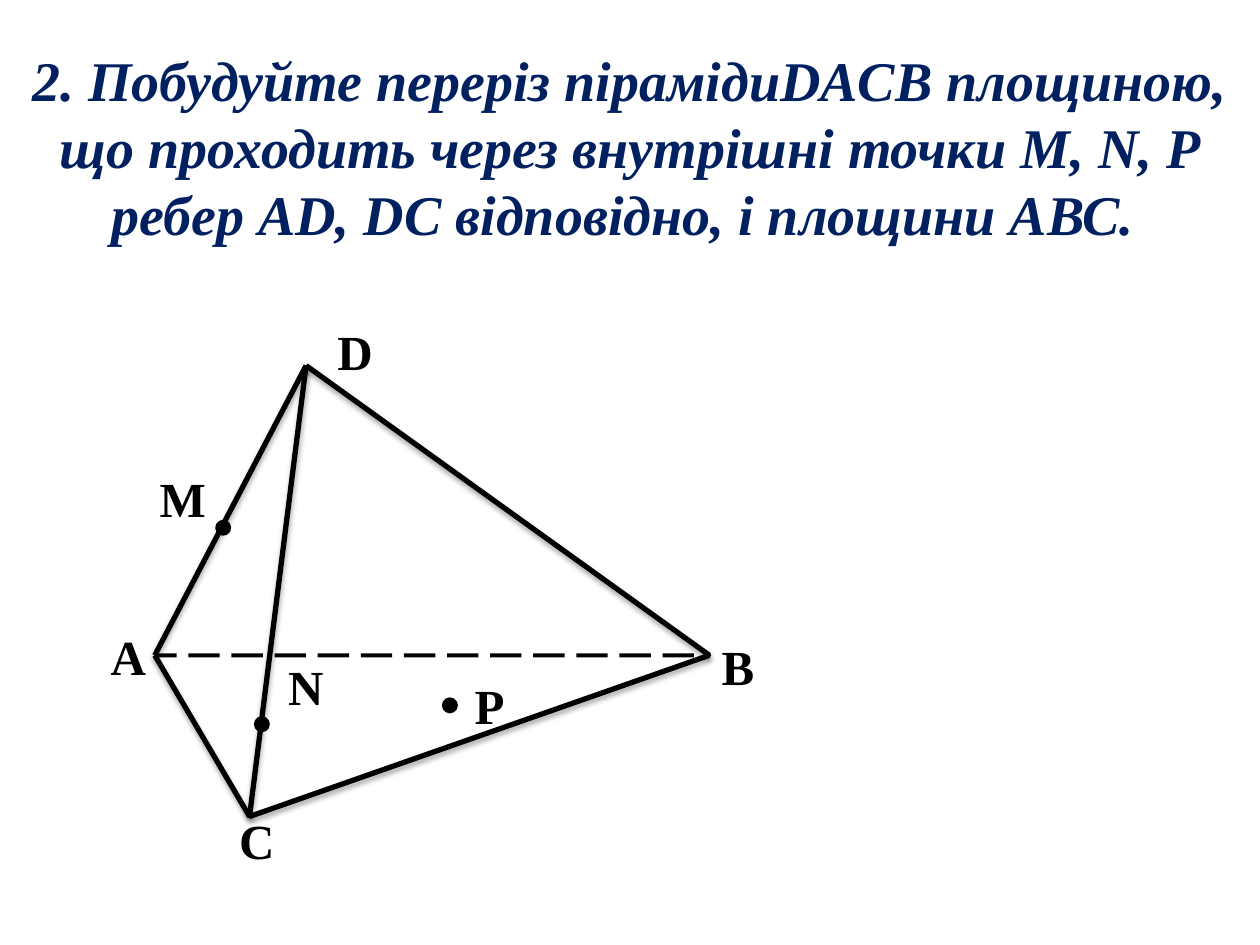
from dataclasses import dataclass
from lxml.etree import SubElement
from pptx import Presentation
from pptx.dml.color import RGBColor
from pptx.enum.dml import MSO_LINE
from pptx.enum.shapes import MSO_CONNECTOR, MSO_SHAPE
from pptx.enum.text import MSO_ANCHOR, MSO_AUTO_SIZE, PP_ALIGN
from pptx.oxml.ns import qn
from pptx.util import Cm, Pt


@dataclass(frozen=True)
class Theme:
    """Colours, type sizes and line widths."""
    navy: RGBColor = RGBColor(0x00, 0x20, 0x60)
    black: RGBColor = RGBColor(0, 0, 0)
    font: str = "Times New Roman"
    head: int = 32
    mark: int = 28
    edge: float = 3
    dash: float = 2.25
    rim: float = 2


class Board:
    """Draws styled elements on the current slide."""

    def __init__(self, slide, theme):
        self.slide, self.theme = slide, theme
        self.group = slide.shapes.add_group_shape().shapes

    def add_text(self, para, text, size, color, slant=None):
        """Add one styled run."""
        run = para.add_run()
        run.text = text
        font = run.font
        font.name, font.size, font.bold, font.italic = self.theme.font, Pt(size), True, slant
        font.color.rgb = color

    def title(self, text, left, top, width, height):
        """Fill and place the title."""
        shape = self.slide.shapes.title
        shape.left, shape.top, shape.width, shape.height = map(Cm, (left, top, width, height))
        frame = shape.text_frame
        frame.word_wrap, frame.vertical_anchor = True, MSO_ANCHOR.TOP
        frame.auto_size = MSO_AUTO_SIZE.SHAPE_TO_FIT_TEXT
        para = frame.paragraphs[0]
        para.alignment = PP_ALIGN.CENTER
        self.add_text(para, text, self.theme.head, self.theme.navy, True)

    def base(self, left, top, width, height, peak):
        """Draw the dashed base with its peak pointing down."""
        shape = self.group.add_shape(MSO_SHAPE.ISOSCELES_TRIANGLE, *map(Cm, (left, top, width, height)))
        shape.adjustments[0] = peak
        shape.rotation = 180
        shape._element.spPr.find(qn("a:xfrm")).set("flipH", "1")
        shape.shadow.inherit = False
        shape.fill.background()
        shape.line.color.rgb = self.theme.black
        shape.line.width = Pt(self.theme.dash)
        shape.line.dash_style = MSO_LINE.LONG_DASH

    def edge(self, start, end):
        """Draw a solid edge with a soft shadow."""
        line = self.group.add_connector(MSO_CONNECTOR.STRAIGHT, *map(Cm, start + end))
        line.line.color.rgb = self.theme.black
        line.line.width = Pt(self.theme.edge)
        effect = SubElement(line._element.spPr, qn("a:effectLst"))
        shade = SubElement(effect, qn("a:outerShdw"), blurRad="40000", dist="23000",
                           dir="5400000", rotWithShape="0")
        color = SubElement(shade, qn("a:srgbClr"), val=str(self.theme.black))
        SubElement(color, qn("a:alpha"), val="35000")

    def dot(self, x, y, size=0.25):
        """Draw a point centred at x, y."""
        shape = self.group.add_shape(MSO_SHAPE.OVAL, Cm(x - size / 2), Cm(y - size / 2), Cm(size), Cm(size))
        shape.shadow.inherit = False
        shape.fill.solid()
        shape.fill.fore_color.rgb = shape.line.color.rgb = self.theme.black
        shape.line.width = Pt(self.theme.rim)

    def label(self, text, left, top, width, height=1.45):
        """Name a point."""
        frame = self.group.add_textbox(*map(Cm, (left, top, width, height))).text_frame
        frame.word_wrap = False
        frame.auto_size = MSO_AUTO_SIZE.SHAPE_TO_FIT_TEXT
        self.add_text(frame.paragraphs[0], text, self.theme.mark, self.theme.black)


def main():
    """Build the pyramid slide."""
    deck = Presentation()
    deck.slide_width, deck.slide_height = Cm(25.4), Cm(19.05)
    board = Board(deck.slides.add_slide(deck.slide_layouts[5]), Theme())
    board.title("2. Побудуйте переріз пірамідиDACB площиною, що проходить через внутрішні "
                "точки M, N, P ребер AD, DC відповідно, і площини АВС. ", 0, 0.79, 25.4, 4.37)
    a, b, c, d = (3.12, 13.21), (14.3, 13.21), (5.03, 16.46), (6.17, 7.37)
    board.base(*a, b[0] - a[0], c[1] - a[1], (c[0] - a[0]) / (b[0] - a[0]))
    for start, end in ((a, c), (c, b), (c, d), (d, a), (d, b)):
        board.edge(start, end)
    for spot in ((5.28, 14.6), (9.07, 14.22), (4.5, 10.64)):
        board.dot(*spot)
    for text, left, top, width in (
        ("А", 1.98, 12.5, 1.24),
        ("N", 5.56, 13.11, 1.24),
        ("М", 2.97, 9.32, 1.45),
        ("Р", 9.32, 13.49, 1.12),
        ("D", 6.55, 6.35, 1.24),
        ("С", 4.57, 16.21, 1.24),
        ("В", 14.3, 12.7, 1.17),
    ):
        board.label(text, left, top, width)
    deck.save("out.pptx")


if __name__ == "__main__":
    main()
